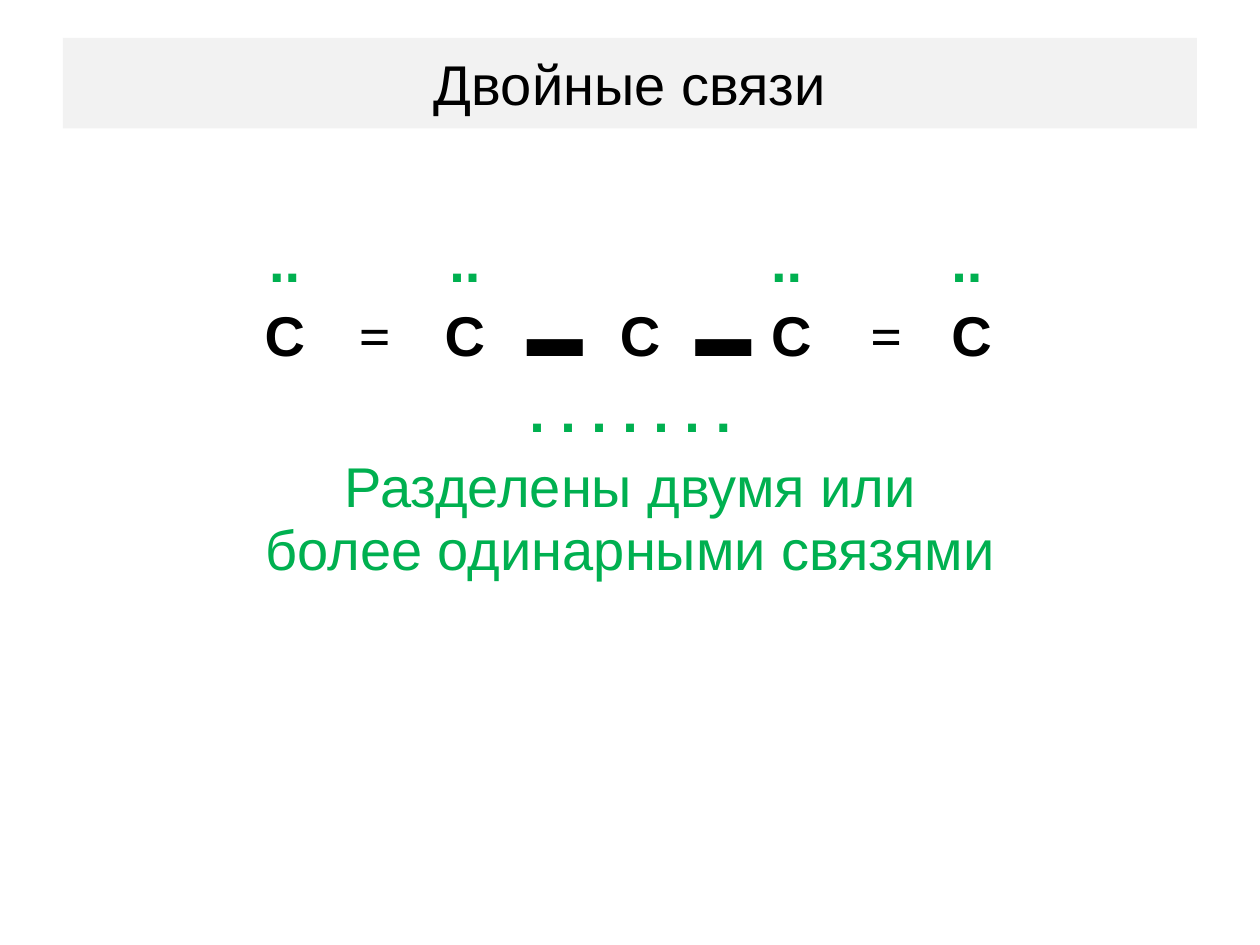
from dataclasses import dataclass

from pptx import Presentation
from pptx.dml.color import RGBColor
from pptx.enum.shapes import MSO_SHAPE
from pptx.enum.text import MSO_ANCHOR, PP_ALIGN
from pptx.util import Inches, Pt


@dataclass(frozen=True)
class Theme:
    black: RGBColor = RGBColor(0x00, 0x00, 0x00)
    green: RGBColor = RGBColor(0x00, 0xB0, 0x50)
    band: RGBColor = RGBColor(0xF2, 0xF2, 0xF2)
    text_size: int = 32
    sans: str = "Arial"
    serif: str = "Times New Roman"


@dataclass(frozen=True)
class Symbol:
    text: str
    align: PP_ALIGN = PP_ALIGN.CENTER
    font: str = Theme.sans
    dots: str = ""


THEME = Theme()
LEFT = PP_ALIGN.LEFT
CHAIN = [
    Symbol("С", dots=".."),
    Symbol("=", font=THEME.serif),
    Symbol("С", dots=".."),
    Symbol("▬", font=THEME.serif),
    Symbol("С", LEFT),
    Symbol("▬", LEFT, THEME.serif),
    Symbol("С", LEFT, dots=".."),
    Symbol("=", font=THEME.serif),
    Symbol("С", LEFT, dots=".."),
]
CAPTIONS = [
    (". . . . . . .", True),
    ("Разделены двумя или более одинарными связями", False),
]
COLUMN_WIDTHS = [0.6, 0.83, 0.6, 0.83, 0.6, 0.6, 0.6, 0.83, 0.6]
ROW_HEIGHTS = [0.59, 0.59, 0.55, 0.55]


def write(frame, text: str, *, color: RGBColor = THEME.black, bold: bool = False,
          font: str = THEME.sans, align: PP_ALIGN = PP_ALIGN.CENTER) -> None:
    paragraph = frame.paragraphs[0]
    paragraph.alignment = align
    span = paragraph.add_run()
    span.text = text
    span.font.name = font
    span.font.size = Pt(THEME.text_size)
    span.font.bold = bold
    span.font.color.rgb = color


def add_title(page, text: str) -> None:
    box = page.shapes.add_shape(
        MSO_SHAPE.RECTANGLE, Inches(0.5), Inches(0.3), Inches(9), Inches(0.72))
    box.shadow.inherit = False
    box.fill.solid()
    box.fill.fore_color.rgb = THEME.band
    box.line.fill.background()
    box.text_frame.vertical_anchor = MSO_ANCHOR.MIDDLE
    write(box.text_frame, text)


def add_bond_table(page) -> None:
    table = page.shapes.add_table(
        len(ROW_HEIGHTS), len(CHAIN), Inches(1.96), Inches(1.8),
        Inches(sum(COLUMN_WIDTHS)), Inches(sum(ROW_HEIGHTS))).table
    table.first_row = False
    table.horz_banding = False
    for column, width in zip(table.columns, COLUMN_WIDTHS):
        column.width = Inches(width)
    for row, height in zip(table.rows, ROW_HEIGHTS):
        row.height = Inches(height)
    for cell in table.iter_cells():
        cell.fill.background()
        cell.margin_top = cell.margin_bottom = Inches(0.04)

    for index, symbol in enumerate(CHAIN):
        if symbol.dots:
            write(table.cell(0, index).text_frame, symbol.dots,
                  color=THEME.green, bold=True, align=symbol.align)
        write(table.cell(1, index).text_frame, symbol.text,
              bold=True, font=symbol.font, align=symbol.align)
    for row, (text, bold) in enumerate(CAPTIONS, start=2):
        cell = table.cell(row, 0)
        cell.merge(table.cell(row, len(CHAIN) - 1))
        cell.margin_top = cell.margin_bottom = Inches(0.05)
        write(cell.text_frame, text, color=THEME.green, bold=bold)


def main() -> None:
    deck = Presentation()
    deck.slide_width = Inches(10)
    deck.slide_height = Inches(7.5)
    page = deck.slides.add_slide(deck.slide_layouts[6])
    add_title(page, "Двойные связи")
    add_bond_table(page)
    deck.save("out.pptx")


if __name__ == "__main__":
    main()
